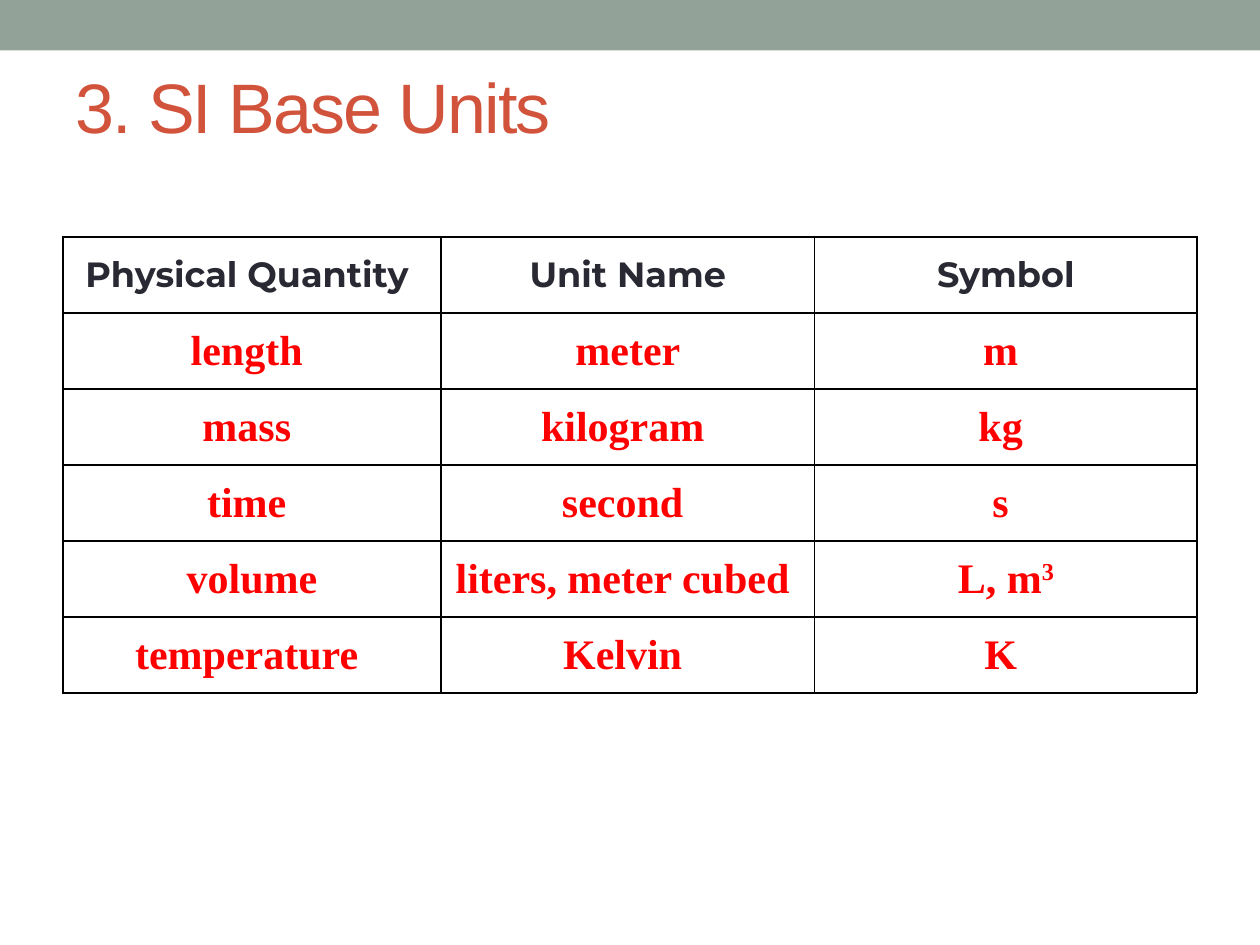
from lxml.etree import SubElement
from pptx import Presentation
from pptx.dml.color import RGBColor
from pptx.enum.shapes import MSO_SHAPE as Preset
from pptx.enum.text import MSO_ANCHOR as Anchor, PP_ALIGN as Align
from pptx.oxml.ns import qn
from pptx.util import Pt

SAGE = RGBColor(0x93, 0xA2, 0x99)
BRICK = RGBColor(0xD2, 0x53, 0x3C)
INK = RGBColor(0x29, 0x29, 0x34)
RED = RGBColor(0xFF, 0x00, 0x00)

COLUMN_WIDTHS = (216, 213.6, 218.4)
ROW_HEIGHT = 43.43
# A cell is a list of runs; every second run is superscript.
UNITS = [
    (["Physical Quantity "], ["Unit Name"], ["Symbol"]),
    (["length "], ["meter"], ["m "]),
    (["mass "], ["kilogram "], ["kg "]),
    (["time "], ["second "], ["s "]),
    (["volume"], ["liters, meter cubed "], ["L, m", "3"]),
    (["temperature "], ["Kelvin "], ["K "]),
]


class SlideBuilder:
    title_style = ("Arial", 40, BRICK, False)
    header_style = ("Montserrat", 20, INK, True)
    body_style = ("Times New Roman", 24, RED, True)

    def __init__(self, page):
        self.page = page

    def span(self, para, text, style):
        span = para.add_run()
        span.text = text
        font = span.font
        font.name, size, font.color.rgb, font.bold = style
        font.size = Pt(size)
        return span

    def title(self, text, left, top, width, height):
        box = self.page.shapes.title
        box.left, box.top, box.width, box.height = map(Pt, (left, top, width, height))
        frame = box.text_frame
        frame.word_wrap = True
        frame.vertical_anchor = Anchor.MIDDLE
        para = frame.paragraphs[0]
        para.alignment = Align.LEFT
        span = self.span(para, text, self.title_style)
        span.font._element.set("spc", "-100")

    def band(self, left, top, width, height, color):
        """Add a plain rectangle behind the title."""
        box = self.page.shapes.add_shape(
            Preset.RECTANGLE, *map(Pt, (left, top, width, height)))
        box.shadow.inherit = False
        box.fill.solid()
        box.fill.fore_color.rgb = color
        box.line.fill.background()
        self.page.shapes.title.element.addprevious(box.element)

    def table(self, rows, left, top, widths, row_height):
        frame = self.page.shapes.add_table(
            len(rows), len(widths), Pt(left), Pt(top),
            Pt(sum(widths)), Pt(row_height * len(rows)))
        table = frame.table
        table.first_row = table.horz_banding = False
        for column, width in zip(table.columns, widths):
            column.width = Pt(width)
        for index, row in enumerate(rows):
            table.rows[index].height = Pt(row_height)
            style = self.body_style if index else self.header_style
            for column, texts in enumerate(row):
                self.cell(table.cell(index, column), texts, style)

    def cell(self, cell, texts, style):
        cell.vertical_anchor = Anchor.MIDDLE
        para = cell.text_frame.paragraphs[0]
        para.alignment = Align.CENTER
        properties = para._p.get_or_add_pPr()
        properties.set("marL", str(Pt(27)))
        properties.set("indent", str(Pt(-27)))
        for index, text in enumerate(texts):
            span = self.span(para, text, style)
            if index % 2:
                span.font._element.set("baseline", "30000")
        self.borders(cell)
        cell.fill.background()

    def borders(self, cell):
        properties = cell._tc.get_or_add_tcPr()
        for side in ("a:lnL", "a:lnR", "a:lnT", "a:lnB"):
            line = SubElement(properties, qn(side), w=str(Pt(0.75)))
            fill = SubElement(line, qn("a:solidFill"))
            SubElement(fill, qn("a:srgbClr"), val="000000")


def main():
    deck = Presentation()
    deck.slide_width, deck.slide_height = Pt(720), Pt(540)
    title_only = deck.slide_layouts[5]
    builder = SlideBuilder(deck.slides.add_slide(title_only))
    builder.band(0, 0, 720, 28.8, SAGE)
    builder.title("3. SI Base Units", 36, 9.4, 594, 102.2)
    builder.table(UNITS, 36, 135.4, COLUMN_WIDTHS, ROW_HEIGHT)
    deck.save("out.pptx")


if __name__ == "__main__":
    main()
